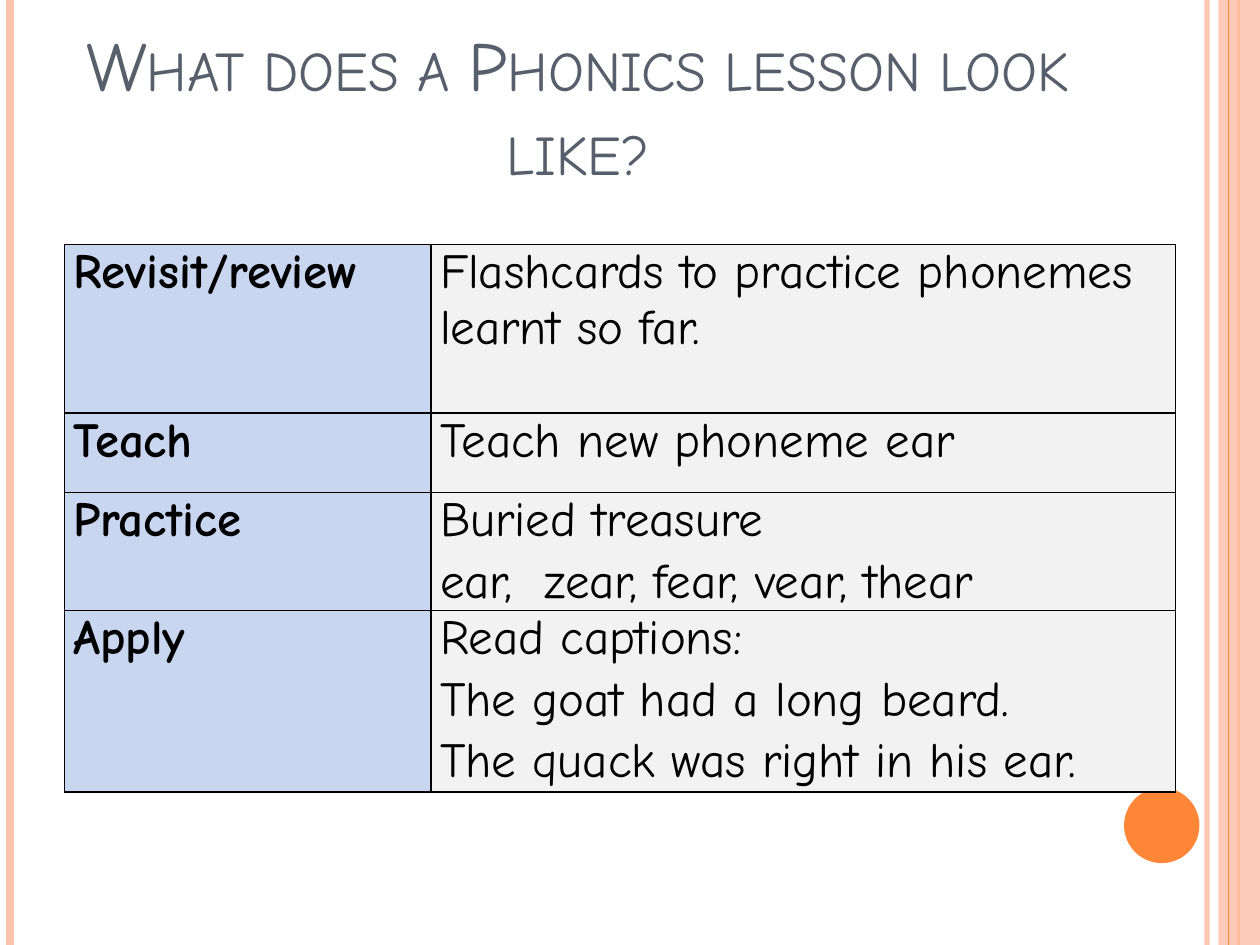
from lxml import etree
from pptx import Presentation
from pptx import util as u
from pptx.dml.color import RGBColor
from pptx.enum import shapes, text
from pptx.oxml import ns

# Content
FONT = "Comic Neue"
TITLE = "What does a Phonics lesson look like?"
LESSON = [  # stage, activities, row height in cm
    ("Revisit/review", ["Flashcards to practice phonemes learnt so far."], 3.4),
    ("Teach", ["Teach new phoneme ear"], 1.6),
    ("Practice", ["Buried treasure", "ear,  zear, fear, vear, thear"], 2.29),
    ("Apply", ["Read captions:", "The goat had a long beard.",
               "The quack was right in his ear."], 3.66),
]
COLUMNS = [7.39, 15.01]
WIDTH, HEIGHT = 25.4, 19.05
PEACH, ORANGE = "FEC3AE", "FE8637"
BACK_STRIPES = [(24.33, PEACH, 3, 93), (0.2, PEACH, 4.5, 100), (24.97, ORANGE, 1.5, 100)]
FRONT_STRIPE = (24.77, ORANGE, 0.75, 100)


def rgb(color):
    return RGBColor.from_string(color)


def sub(parent, tag, **attrs):
    return etree.SubElement(parent, ns.qn(tag), attrs)


def set_alpha(shape, percent):
    clr = next(shape._element.spPr.iter(ns.qn("a:srgbClr")))
    sub(clr, "a:alpha", val=str(percent * 1000))


def add_stripe(s, x, color, weight, opacity):
    line = s.shapes.add_connector(shapes.MSO_CONNECTOR.STRAIGHT,
                                  u.Cm(x), 0, u.Cm(x), u.Cm(HEIGHT))
    line.line.color.rgb = rgb(color)
    line.line.width = u.Pt(weight)
    if opacity < 100:
        set_alpha(line, opacity)
    sub(line._element.spPr, "a:effectLst")


def add_block(s, kind, box, color):
    block = s.shapes.add_shape(kind, *map(u.Cm, box))
    block.shadow.inherit = False
    block.fill.solid()
    block.fill.fore_color.rgb = rgb(color)
    block.line.fill.background()
    return block


def style_runs(p, size, color, bold=None):
    for r in p.runs:
        r.font.name, r.font.size, r.font.bold = FONT, u.Pt(size), bold
        r.font.color.rgb = rgb(color)


def fill_cell(cell, lines, fill, bold):
    cell.margin_left = cell.margin_right = u.Cm(0.18)
    cell.margin_top = cell.margin_bottom = 0
    tf = cell.text_frame
    tf.text = "\n".join(lines)
    for p in tf.paragraphs:
        p.space_before = u.Pt(3)
        style_runs(p, 28, "000000", bold)
    # Borders come before the fill in the cell properties
    for side in ("a:lnL", "a:lnR", "a:lnT", "a:lnB"):
        ln = sub(cell._tc.get_or_add_tcPr(), side, w=str(u.Pt(1)))
        sub(sub(ln, "a:solidFill"), "a:srgbClr", val="000000")
    cell.fill.solid()
    cell.fill.fore_color.rgb = rgb(fill)


prs = Presentation()
prs.slide_width, prs.slide_height = u.Cm(WIDTH), u.Cm(HEIGHT)
s = prs.slides.add_slide(prs.slide_layouts[5])

# Side stripes, right band and dot
for stripe in BACK_STRIPES:
    add_stripe(s, *stripe)
band = add_block(s, shapes.MSO_SHAPE.RECTANGLE, (24.56, 0, 0.84, HEIGHT), PEACH)
set_alpha(band, 87)
add_stripe(s, *FRONT_STRIPE)
add_block(s, shapes.MSO_SHAPE.OVAL, (22.66, 15.88, 1.52, 1.52), ORANGE)

# Title
title = s.shapes.title
title.left, title.top, title.width, title.height = map(u.Cm, (1.27, 0.76, 20.75, 3.18))
tf = title.text_frame
tf.text = TITLE
tf.word_wrap = True
tf.auto_size = text.MSO_AUTO_SIZE.NONE
tf.vertical_anchor = text.MSO_ANCHOR.BOTTOM
p = tf.paragraphs[0]
p.alignment = text.PP_ALIGN.CENTER
style_runs(p, 40, "575F6D")
p.runs[0].font._element.set("cap", "small")

# Lesson table
heights = [row[2] for row in LESSON]
table = s.shapes.add_table(len(LESSON), len(COLUMNS), u.Cm(1.3), u.Cm(4.93),
                           u.Cm(sum(COLUMNS)), u.Cm(sum(heights))).table
table.first_row = table.horz_banding = False
for column, width in zip(table.columns, COLUMNS):
    column.width = u.Cm(width)
for row, (stage, activities, height) in zip(table.rows, LESSON):
    row.height = u.Cm(height)
    fill_cell(row.cells[0], [stage], "C8D6F0", True)
    fill_cell(row.cells[1], activities, "F2F2F2", False)

prs.save("out.pptx")
